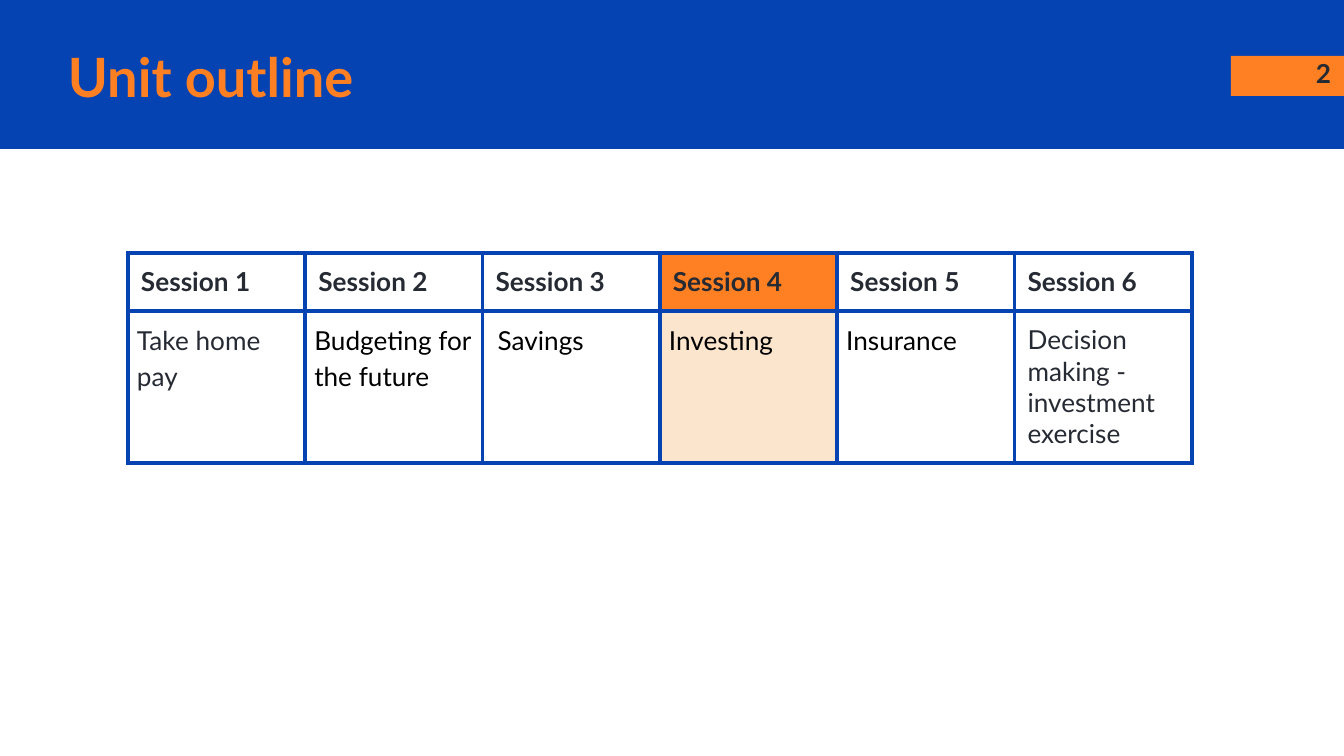
from lxml.etree import SubElement as Sub
from pptx import Presentation
from pptx.dml.color import RGBColor as RGB
from pptx.enum.shapes import MSO_SHAPE as SHAPE
from pptx.enum.text import MSO_ANCHOR as ANCHOR, PP_ALIGN as ALIGN
from pptx.oxml.ns import qn
from pptx.util import Pt

HUE = {"blue": "0543B3", "orange": "FF8022", "peach": "FCE5CD",
       "dark": "262A33", "black": "000000", "white": "FFFFFF"}
SCALE = 914400 / 134.4


def px(*nums):
    return [round(n * SCALE) for n in nums]


def write(frame, text, size, hue, bold, pad):
    frame.word_wrap = True
    frame.margin_left, frame.margin_top, frame.margin_right, frame.margin_bottom = px(*pad)
    para = frame.paragraphs[0]
    run = para.add_run()
    run.text = text
    run.font.name = "Lato"
    run.font.size = Pt(size)
    run.font.bold = bold
    run.font.color.rgb = RGB.from_string(HUE[hue])
    return para


deck = Presentation()
deck.slide_width, deck.slide_height = px(1344, 756)
slide = deck.slides.add_slide(deck.slide_layouts[6])
shapes = slide.shapes

for box, hue in [((0, 0, 1344, 149), "blue"), ((1231, 56, 113, 40), "orange")]:
    band = shapes.add_shape(SHAPE.RECTANGLE, *px(*box))
    band.shadow.inherit = False
    band.fill.solid()
    band.fill.fore_color.rgb = RGB.from_string(HUE[hue])
    band.line.fill.background()

WIDE = (13, 13, 13, 13)
number = shapes.add_textbox(*px(1263, 44, 81, 58)).text_frame
write(number, "2", 14, "dark", True, WIDE).alignment = ALIGN.RIGHT

title = shapes.add_textbox(*px(55, 38, 1137, 75)).text_frame
title.vertical_anchor = ANCHOR.MIDDLE
write(title, "Unit outline", 29, "orange", True, WIDE)

TIGHT = (9, 9, 9, 9)
topics = [
    ("Take home pay", "dark", TIGHT, 1.15),
    ("Budgeting for the future", "black", TIGHT, 1.15),
    ("Savings", "black", (15, 9, 9, 9), 1.15),
    ("Investing", "black", TIGHT, 1.15),
    ("Insurance", "black", TIGHT, 1.15),
    ("Decision making - investment exercise", "dark", WIDE, 1.0),
]
NOW = 3

table = shapes.add_table(2, len(topics), *px(128, 253, 1064, 210)).table
table.first_row = table.horz_banding = False
for row, tall in zip(table.rows, px(58, 152)):
    row.height = tall

for col, (topic, hue, pad, gap) in enumerate(topics):
    head, body = table.cell(0, col), table.cell(1, col)
    write(head.text_frame, f"Session {col + 1}", 14, "dark", True, WIDE)
    write(body.text_frame, topic, 14, hue, False, pad).line_spacing = gap
    for cell, inset, tint in [(head, WIDE, "orange"), (body, pad, "peach")]:
        cell.margin_left, cell.margin_top, cell.margin_right, cell.margin_bottom = px(*inset)
        props = cell._tc.get_or_add_tcPr()
        for side in ("lnL", "lnR", "lnT", "lnB"):
            edge = Sub(props, qn(f"a:{side}"), w=str(Pt(2.25)))
            Sub(Sub(edge, qn("a:solidFill")), qn("a:srgbClr"), val=HUE["blue"])
        cell.fill.solid()
        cell.fill.fore_color.rgb = RGB.from_string(HUE[tint if col == NOW else "white"])

deck.save("out.pptx")
